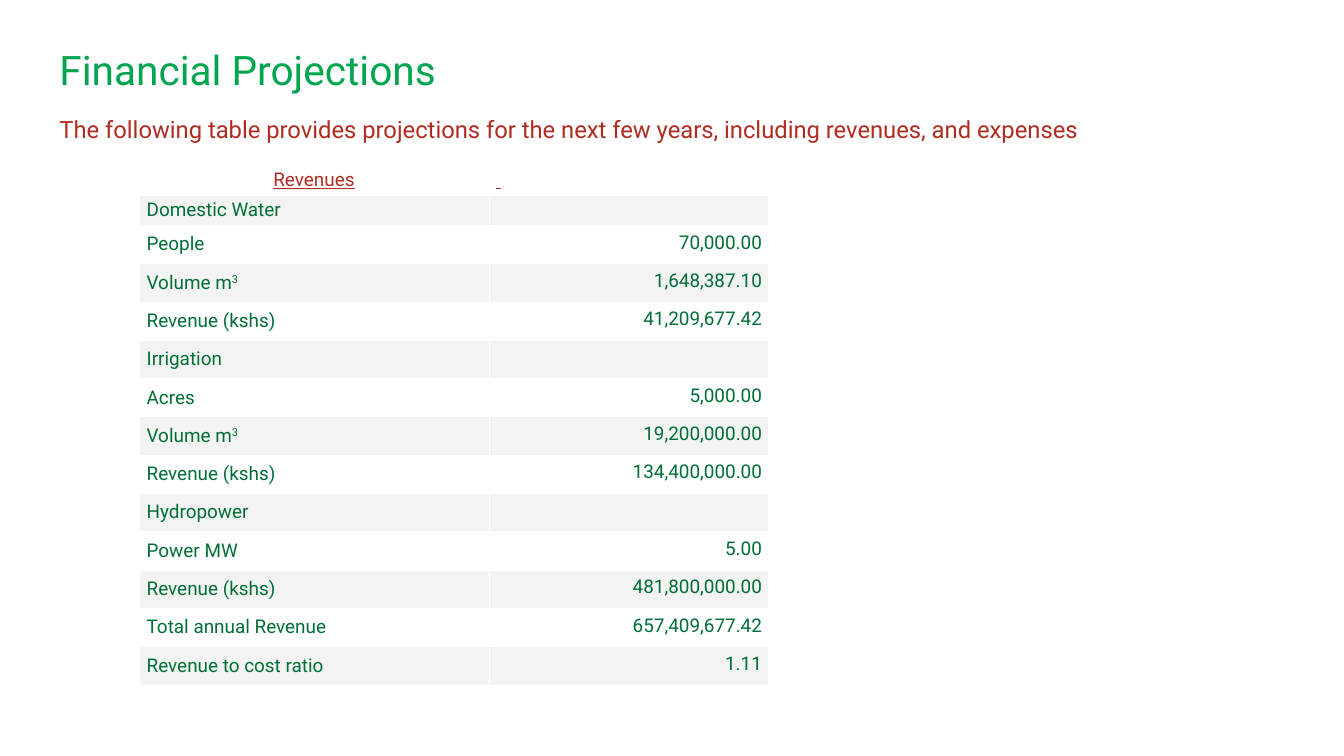
from pptx import Presentation
from pptx.dml.color import RGBColor
from pptx.enum.text import MSO_ANCHOR, MSO_AUTO_SIZE, PP_ALIGN
from pptx.oxml import parse_xml
from pptx.oxml.ns import nsdecls
from pptx.util import Pt

PX = 9144  # 100 px to the inch
TOP, MIDDLE = MSO_ANCHOR.TOP, MSO_ANCHOR.MIDDLE
LEFT, CENTER, RIGHT = PP_ALIGN.LEFT, PP_ALIGN.CENTER, PP_ALIGN.RIGHT
TITLE_ONLY = 5

BRIGHT_GREEN, DARK_GREEN, RED = "00A54F", "006F35", "B02C20"
WHITE, BAND = "FFFFFF", "F3F3F3"

REVENUE_ROWS = [
    ("Domestic Water", ""),
    ("People", "70,000.00"),
    ("Volume m^3", "1,648,387.10"),
    ("Revenue (kshs)", "41,209,677.42"),
    ("Irrigation", ""),
    ("Acres", "5,000.00"),
    ("Volume m^3", "19,200,000.00"),
    ("Revenue (kshs)", "134,400,000.00"),
    ("Hydropower", ""),
    ("Power MW", "5.00"),
    ("Revenue (kshs)", "481,800,000.00"),
    ("Total annual Revenue", "657,409,677.42"),
    ("Revenue to cost ratio", "1.11"),
]
LABEL_INSETS = (15, 0, 15, 0)
VALUE_INSETS = (3, 3, 12, 10)


def px(length):
    return length * PX


def rgb(color):
    return RGBColor.from_string(color)


class SlideBuilder:
    font = "Roboto"
    text_insets = (27, 27, 27, 27)

    def __init__(self, slide):
        self.slide = slide

    def set_insets(self, target, insets):
        (target.margin_left, target.margin_top,
         target.margin_right, target.margin_bottom) = map(px, insets)

    def style_runs(self, paragraph, size, color, underline=None):
        for run in paragraph.runs:
            run.font.name = self.font
            run.font.size = Pt(size)
            run.font.color.rgb = rgb(color)
            run.font.underline = underline

    def fill_frame(self, frame, text, size, color):
        frame.text = text
        frame.word_wrap = True
        frame.vertical_anchor = TOP
        self.set_insets(frame, self.text_insets)
        paragraph = frame.paragraphs[0]
        paragraph.alignment = LEFT
        self.style_runs(paragraph, size, color)
        return paragraph

    def title(self, text, left, top, width, height, size, color):
        heading = self.slide.shapes.title
        heading.left, heading.top = px(left), px(top)
        heading.width, heading.height = px(width), px(height)
        heading.text_frame.auto_size = MSO_AUTO_SIZE.NONE
        self.fill_frame(heading.text_frame, text, size, color)

    def text(self, text, left, top, width, height, size, color):
        box = self.slide.shapes.add_textbox(px(left), px(top), px(width), px(height))
        paragraph = self.fill_frame(box.text_frame, text, size, color)
        paragraph.line_spacing = 1.15
        paragraph.space_after = Pt(32)

    def table(self, left, top, column_widths, row_heights):
        table = self.slide.shapes.add_table(
            len(row_heights), len(column_widths), px(left), px(top),
            px(sum(column_widths)), px(sum(row_heights))).table
        for column, width in zip(table.columns, column_widths):
            column.width = px(width)
        for row, height in zip(table.rows, row_heights):
            row.height = px(height)
        return table

    def cell(self, cell, text, fill, insets, align, color, underline=None):
        """Fill one cell; a caret in the text starts a superscript."""
        cell.fill.solid()
        cell.fill.fore_color.rgb = rgb(fill)
        cell.vertical_anchor = MIDDLE
        self.set_insets(cell, insets)
        base, _, raised = text.partition("^")
        cell.text_frame.text = base
        paragraph = cell.text_frame.paragraphs[0]
        paragraph.alignment = align
        if raised:
            superscript = paragraph.add_run()
            superscript.text = raised
            superscript.font._element.set("baseline", "30000")
        self.style_runs(paragraph, 27, color, underline)
        self.borders(cell)

    def borders(self, cell):
        properties = cell._tc.get_or_add_tcPr()
        for index, side in enumerate(("lnL", "lnR", "lnT", "lnB")):
            properties.insert(index, parse_xml(
                f'<a:{side} {nsdecls("a")} w="{Pt(1)}"><a:solidFill>'
                f'<a:srgbClr val="{WHITE}"/></a:solidFill></a:{side}>'))


def main():
    deck = Presentation()
    deck.slide_width, deck.slide_height = px(2667), px(1500)
    builder = SlideBuilder(deck.slides.add_slide(deck.slide_layouts[TITLE_ONLY]))

    # Heading and introduction
    builder.title("Financial Projections", 91, 63, 2485, 167, 58, BRIGHT_GREEN)
    builder.text("The following table provides projections for the next few years, "
                 "including revenues, and expenses", 91, 192, 2423, 111, 34, RED)

    # Revenue table: heading row, then banded rows
    row_heights = [60, 60] + [76] * (len(REVENUE_ROWS) - 1)
    revenues = builder.table(276, 327, [694, 554], row_heights)
    builder.cell(revenues.cell(0, 0), "Revenues", WHITE, LABEL_INSETS, CENTER, RED, True)
    builder.cell(revenues.cell(0, 1), " ", WHITE, LABEL_INSETS, LEFT, RED, True)
    for row, (label, value) in enumerate(REVENUE_ROWS, start=1):
        fill = BAND if row % 2 else WHITE
        builder.cell(revenues.cell(row, 0), label, fill, LABEL_INSETS, LEFT, DARK_GREEN)
        builder.cell(revenues.cell(row, 1), value, fill, VALUE_INSETS, RIGHT, DARK_GREEN)

    deck.save("out.pptx")


if __name__ == "__main__":
    main()
